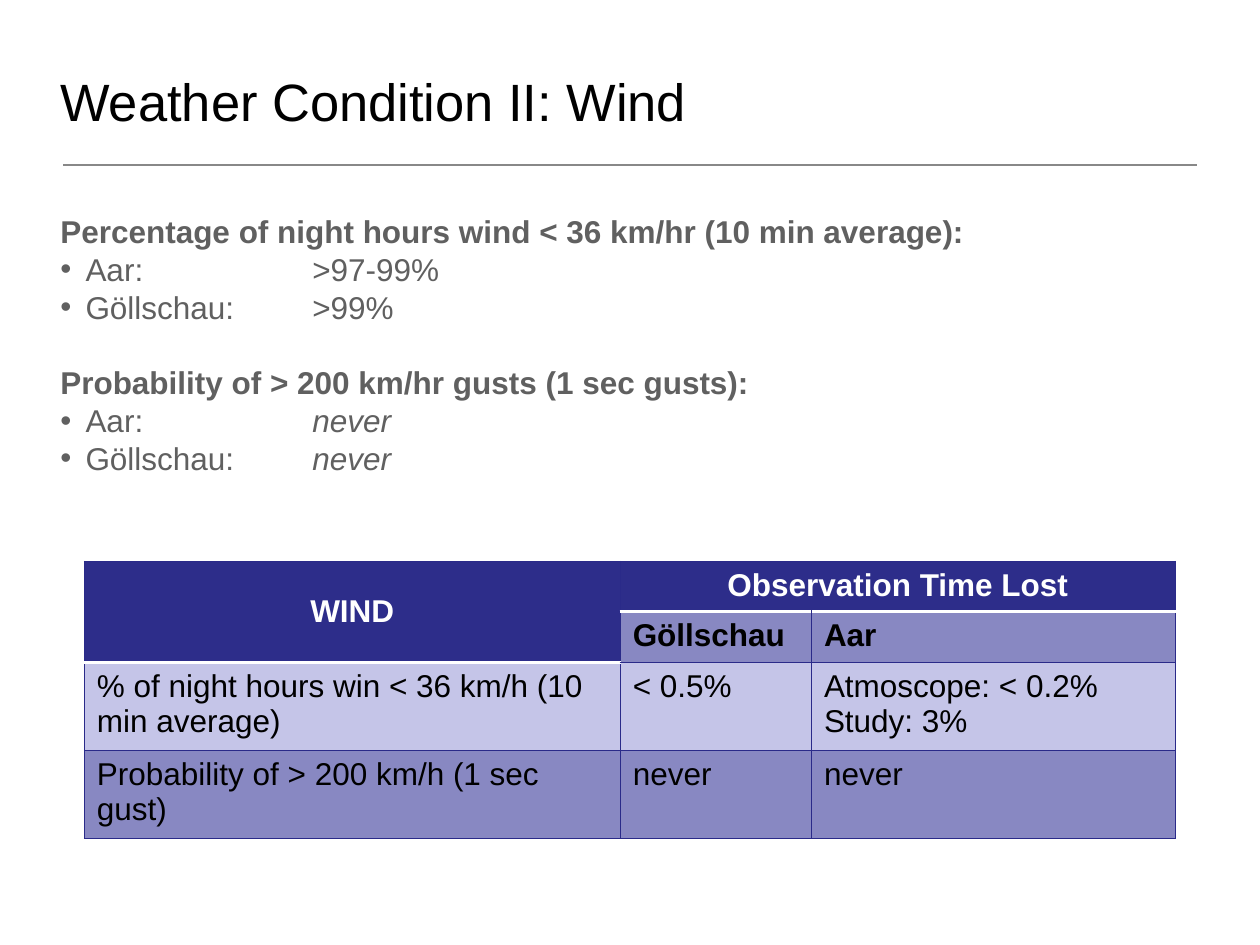
import pptx
import pptx.dml.color
import pptx.enum.shapes
import pptx.enum.text
import pptx.oxml.ns
import pptx.util
from lxml import etree

Pt = pptx.util.Pt
ALIGN = pptx.enum.text.PP_ALIGN
ANCHOR = pptx.enum.text.MSO_ANCHOR
FONT = "Arial"
GREY, NAVY, BORDER = "606060", "2D2D8A", "2A2A89"
MID, LIGHT, WHITE, BLACK = "8888C2", "C5C5E8", "FFFFFF", "000000"


def rgb(value):
    return pptx.dml.color.RGBColor.from_string(value)


def child(parent, tag, **attrs):
    e = etree.SubElement(parent, pptx.oxml.ns.qn(tag))
    for name, value in attrs.items():
        e.set(name, str(value))
    return e


def add_run(p, text, size, color, bold=False, italic=False):
    r = p.add_run()
    r.text = text
    r.font.name, r.font.size = FONT, Pt(size)
    r.font.bold, r.font.italic = bold, italic
    r.font.color.rgb = rgb(color)


def add_text_box(s, left, top, width, height, anchor):
    tf = s.shapes.add_textbox(Pt(left), Pt(top), Pt(width), Pt(height)).text_frame
    tf.word_wrap = True
    tf.vertical_anchor = anchor
    tf.margin_left = tf.margin_right = tf.margin_top = tf.margin_bottom = Pt(3)
    return tf


def add_rule(s, x1, x2, y, color):
    line = s.shapes.add_connector(
        pptx.enum.shapes.MSO_CONNECTOR.STRAIGHT, Pt(x1), Pt(y), Pt(x2), Pt(y))
    line.line.color.rgb = rgb(color)
    line.line.width = Pt(1)
    child(line._element.spPr, "a:effectLst")


def make_bullet(p, indent, tabs):
    pPr = p._p.get_or_add_pPr()
    pPr.set("marL", str(Pt(indent)))
    pPr.set("indent", str(Pt(-indent)))
    pPr.set("defTabSz", str(Pt(tabs[0])))
    child(child(pPr, "a:buClr"), "a:srgbClr", val=GREY)
    child(pPr, "a:buFont", typeface=FONT)
    child(pPr, "a:buChar", char="•")
    tab_list = child(pPr, "a:tabLst")
    for pos in tabs:
        child(tab_list, "a:tab", pos=Pt(pos), algn="l")


def add_findings(tf, sections):
    for i, (heading, items) in enumerate(sections):
        p = tf.add_paragraph() if i else tf.paragraphs[0]
        p.line_spacing = Pt(21.6)
        if i:
            p.space_before = Pt(21.6)
        add_run(p, heading, 18, GREY, bold=True)
        for label, value, italic in items:
            p = tf.add_paragraph()
            make_bullet(p, 14.4, (72, 144))
            p.line_spacing = Pt(21.6)
            add_run(p, label, 18, GREY)
            add_run(p, value, 18, GREY, italic=italic)


def set_borders(cell, white_edges):
    tcPr = cell._tc.get_or_add_tcPr()
    for edge in "LRTB":
        color, width = (WHITE, 2) if edge in white_edges else (BORDER, 0.75)
        ln = child(tcPr, f"a:ln{edge}", w=Pt(width))
        child(child(ln, "a:solidFill"), "a:srgbClr", val=color)


def fill_cell(cell, text, fill, color, bold, align):
    cell.fill.solid()
    cell.fill.fore_color.rgb = rgb(fill)
    for i, line in enumerate(text.split("\n") if text else []):
        tf = cell.text_frame
        p = tf.add_paragraph() if i else tf.paragraphs[0]
        p.alignment = align
        add_run(p, line, 18, color, bold)


def add_wind_table(s, left, top, widths, heights, rows):
    table = s.shapes.add_table(len(rows), len(widths), Pt(left), Pt(top),
                               Pt(sum(widths)), Pt(sum(heights))).table
    for column, width in zip(table.columns, widths):
        column.width = Pt(width)
    for row, height in zip(table.rows, heights):
        row.height = Pt(height)
    table.cell(0, 0).merge(table.cell(1, 0))
    table.cell(0, 1).merge(table.cell(0, 2))
    # White lines run under the two header cells
    white = {(0, 0): "B", (1, 0): "B", (2, 0): "T",
             (0, 1): "B", (0, 2): "B", (1, 1): "T", (1, 2): "T"}
    row_fills = (NAVY, MID, LIGHT, MID)
    for i, row in enumerate(rows):
        for j, text in enumerate(row):
            cell = table.cell(i, j)
            header = i == 0 or (i, j) == (1, 0)
            set_borders(cell, white.get((i, j), ""))
            fill_cell(cell, text, NAVY if header else row_fills[i],
                      WHITE if header else BLACK, i < 2,
                      ALIGN.CENTER if header else ALIGN.LEFT)
    table.cell(0, 0).vertical_anchor = ANCHOR.MIDDLE


def main():
    prs = pptx.Presentation()
    prs.slide_width, prs.slide_height = Pt(720), Pt(540)
    s = prs.slides.add_slide(prs.slide_layouts[6])

    # Title and rule
    add_rule(s, 36, 684, 94.5, "888888")
    tf = add_text_box(s, 31.5, 18, 657, 60.5, ANCHOR.BOTTOM)
    add_run(tf.paragraphs[0], "Weather Condition II: Wind", 30, BLACK)

    # Findings per site
    tf = add_text_box(s, 31.5, 118.3, 657, 373.7, ANCHOR.TOP)
    add_findings(tf, [
        ("Percentage of night hours wind < 36 km/hr (10 min average):",
         [("Aar:\t\t", ">97-99%", False), ("Göllschau:\t", ">99%", False)]),
        ("Probability of > 200 km/hr gusts (1 sec gusts):",
         [("Aar:\t\t", "never", True), ("Göllschau:\t", "never", True)]),
    ])

    # Observation time lost
    add_wind_table(s, 48.2, 320.8, (306.2, 109.3, 208), (27.4, 27.4, 47.4, 47.4), [
        ("WIND", "Observation Time Lost", ""),
        ("", "Göllschau", "Aar"),
        ("% of night hours win < 36 km/h (10 min average)", "< 0.5%",
         "Atmoscope: < 0.2%\nStudy: 3%"),
        ("Probability of > 200 km/h (1 sec gust)", "never", "never"),
    ])
    prs.save("out.pptx")


if __name__ == "__main__":
    main()
